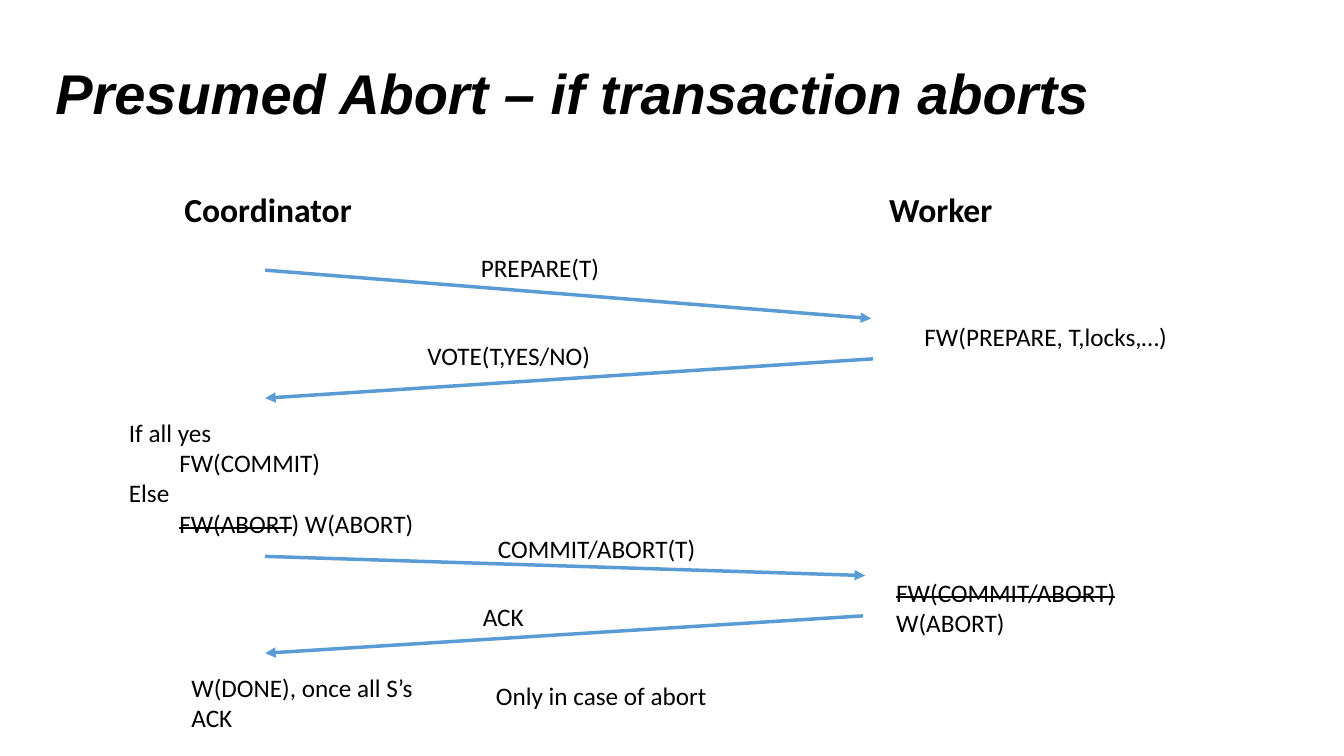
from dataclasses import dataclass

from lxml import etree
from pptx import Presentation
from pptx import util as u
from pptx.dml.color import RGBColor
from pptx.enum import shapes, text
from pptx.oxml import ns


@dataclass(frozen=True)
class Theme:
    """Colours, fonts and type sizes of the slide."""
    ink: RGBColor = RGBColor(0x00, 0x00, 0x00)
    arrow: RGBColor = RGBColor(0x5B, 0x9B, 0xD5)
    title_font: str = "Arial"
    body_font: str = "Calibri"
    title_size: int = 40
    role_size: int = 24
    body_size: int = 18
    arrow_width: float = 2.5


THEME = Theme()
COORDINATOR_X = 2.63

ROLES = [("Coordinator", 1.73), ("Worker", 8.72)]

MESSAGES = [
    ("PREPARE(T)", (COORDINATOR_X, 2.68), (8.64, 3.16), (4.67, 2.45, 2.75, 0.4)),
    ("VOTE(T,YES/NO)", (8.66, 3.56), (COORDINATOR_X, 3.95), (4.14, 3.33, 2.75, 0.4)),
    ("COMMIT/ABORT(T)", (COORDINATOR_X, 5.52), (8.58, 5.71), (4.84, 5.24, 2.5, 0.4)),
    ("ACK", (8.56, 6.11), (COORDINATOR_X, 6.48), (4.69, 5.92, 2.5, 0.4)),
]

STEPS = [
    ((9.07, 3.14, 2.75, 0.4), [[("FW(PREPARE, T,locks,…)", False)]]),
    ((1.18, 4.09, 4.54, 1.31), [
        [("If all yes", False)],
        [("\tFW(COMMIT)", False)],
        [("Else", False)],
        [("\t", False), ("FW(ABORT", True), (") W(ABORT)", False)],
    ]),
    ((8.79, 5.68, 2.75, 0.71), [
        [("FW(COMMIT/ABORT)", True)],
        [("W(ABORT)", False)],
    ]),
    ((1.8, 6.62, 2.75, 0.71), [[("W(DONE), once all S’s ACK", False)]]),
    ((4.82, 6.7, 2.75, 0.4), [[("Only in case of abort", False)]]),
]


def add_run(paragraph, words, size, font, bold=False, italic=False, struck=False):
    """Add one styled run to a paragraph."""
    run = paragraph.add_run()
    run.text = words
    run.font.size = u.Pt(size)
    run.font.name = font
    run.font.bold = bold
    run.font.italic = italic
    run.font.color.rgb = THEME.ink
    if struck:
        run.font._element.set("strike", "sngStrike")


def add_box(parent, box):
    """Add an empty wrapping text box and return its text frame."""
    frame = parent.shapes.add_textbox(*map(u.Inches, box)).text_frame
    frame.word_wrap = True
    return frame


def add_title(slide, words):
    """Add the slide title."""
    frame = add_box(slide, (0.45, 0.23, 11.5, 1.45))
    frame.vertical_anchor = text.MSO_ANCHOR.MIDDLE
    paragraph = frame.paragraphs[0]
    paragraph.line_spacing = 0.9
    add_run(paragraph, words, THEME.title_size, THEME.title_font, bold=True, italic=True)


def add_role(slide, name, left):
    """Add the heading of one participant."""
    frame = add_box(slide, (left, 1.83, 2.81, 0.5))
    add_run(frame.paragraphs[0], name, THEME.role_size, THEME.body_font, bold=True)


def add_step(parent, box, lines):
    """Add body text given as lines of (words, struck) runs."""
    frame = add_box(parent, box)
    for index, line in enumerate(lines):
        paragraph = frame.add_paragraph() if index else frame.paragraphs[0]
        for words, struck in line:
            add_run(paragraph, words, THEME.body_size, THEME.body_font, struck=struck)


def add_arrow(parent, start, end):
    """Add a straight arrow pointing at its end."""
    arrow = parent.shapes.add_connector(
        shapes.MSO_CONNECTOR.STRAIGHT, *map(u.Inches, start + end))
    arrow.line.color.rgb = THEME.arrow
    arrow.line.width = u.Pt(THEME.arrow_width)
    etree.SubElement(arrow.line._get_or_add_ln(), ns.qn("a:tailEnd"), type="triangle")
    etree.SubElement(arrow._element.spPr, ns.qn("a:effectLst"))


def add_message(slide, label, start, end, box):
    """Add a message as a group of an arrow and its label."""
    group = slide.shapes.add_group_shape()
    add_arrow(group, start, end)
    add_step(group, box, [[(label, False)]])


def main():
    """Build the slide and save it."""
    presentation = Presentation()
    presentation.slide_width = u.Inches(13.33)
    presentation.slide_height = u.Inches(7.5)
    slide = presentation.slides.add_slide(presentation.slide_layouts[6])
    add_title(slide, "Presumed Abort – if transaction aborts")
    for name, left in ROLES:
        add_role(slide, name, left)
    for message in MESSAGES:
        add_message(slide, *message)
    for box, lines in STEPS:
        add_step(slide, box, lines)
    presentation.save("out.pptx")


if __name__ == "__main__":
    main()
